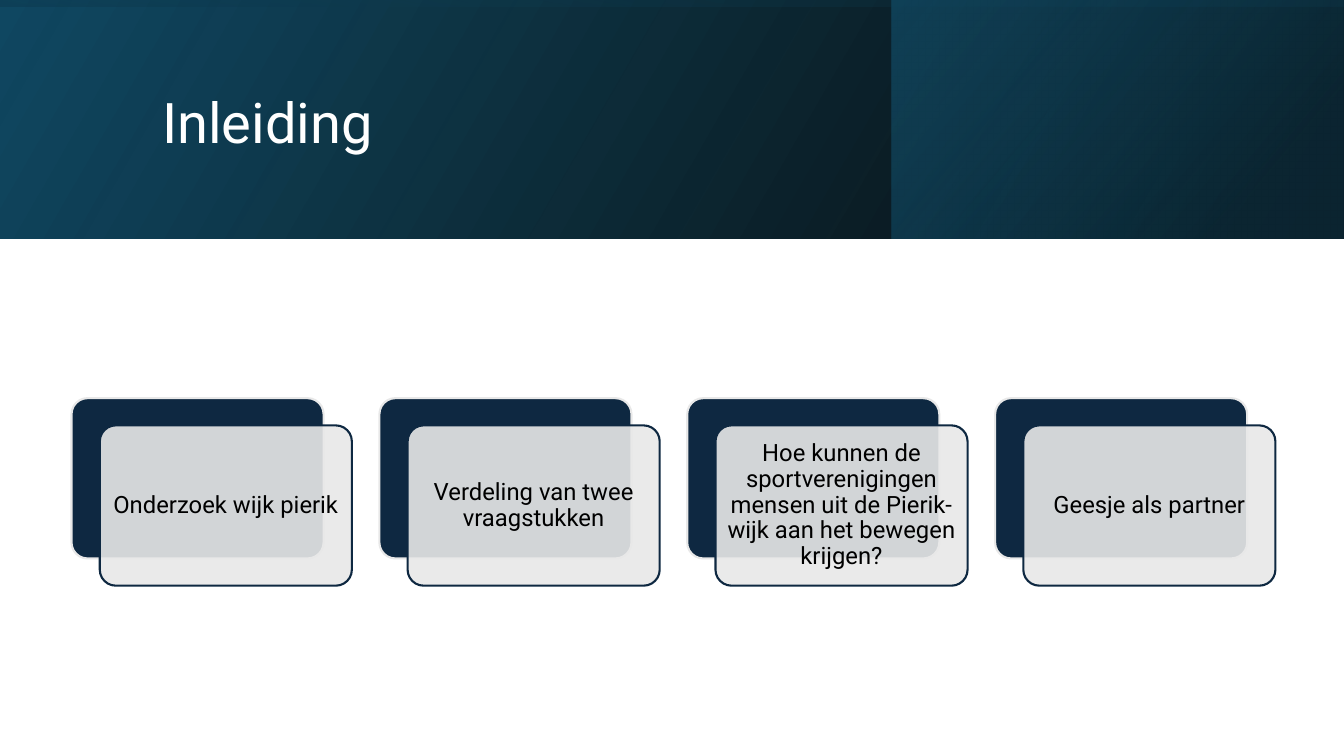
from lxml import etree
from pptx import Presentation
from pptx import util as u
from pptx.dml.color import RGBColor
from pptx.enum import shapes, text
from pptx.oxml import ns

NAVY, GREY = "0E2841", "E8E8E8"


def color(code):
    return RGBColor.from_string(code)


class Deck:
    font = "Roboto"

    def __init__(self, wide, high):
        self.prs = Presentation()
        self.prs.slide_width = u.Inches(wide)
        self.prs.slide_height = u.Inches(high)
        self.slide = self.prs.slides.add_slide(self.prs.slide_layouts[6])

    def shape(self, kind, box):
        item = self.slide.shapes.add_shape(kind, *map(u.Inches, box))
        item.shadow.inherit = False
        return item

    def alpha(self, node, value):
        etree.SubElement(node, ns.qn("a:alpha"), val=str(value * 1000))

    def band(self, box, stops, angle, turn=0):
        """Mirrored rectangle with a gradient; stops are (place, colour, opacity)."""
        item = self.shape(shapes.MSO_SHAPE.RECTANGLE, box)
        item.rotation = turn
        item.line.fill.background()
        props = item._element.spPr
        props.find(ns.qn("a:xfrm")).set("flipH", "1")
        item.fill.gradient()
        grad = props.find(ns.qn("a:gradFill"))
        grad.set("rotWithShape", "1")
        for part in list(grad):
            grad.remove(part)
        group = etree.SubElement(grad, ns.qn("a:gsLst"))
        for place, code, value in stops:
            stop = etree.SubElement(group, ns.qn("a:gs"), pos=str(place * 1000))
            self.alpha(etree.SubElement(stop, ns.qn("a:srgbClr"), val=code), value)
        etree.SubElement(grad, ns.qn("a:lin"), ang=str(angle * 60000), scaled="0")

    def label(self, item, words, size, code, align):
        frame = item.text_frame
        frame.word_wrap = True
        frame.vertical_anchor = text.MSO_ANCHOR.MIDDLE
        para = frame.paragraphs[0]
        para.text = words
        para.alignment = align
        para.line_spacing = 0.9
        para.font.name = self.font
        para.font.size = u.Pt(size)
        para.font.color.rgb = color(code)

    def title(self, box, words):
        item = self.slide.shapes.add_textbox(*map(u.Inches, box))
        self.label(item, words, 40, "FFFFFF", text.PP_ALIGN.LEFT)

    def card(self, box, fill, line):
        item = self.shape(shapes.MSO_SHAPE.ROUNDED_RECTANGLE, box)
        item.adjustments[0] = 0.1
        item.fill.solid()
        item.fill.fore_color.rgb = color(fill)
        item.line.color.rgb = color(line)
        item.line.width = u.Pt(1.5)
        return item

    def topic(self, left, top, words):
        """Dark card with a see-through text card set off in front of it."""
        wide, high = 2.5, 1.59
        self.card((left, top, wide, high), NAVY, GREY)
        front = self.card((left + 0.28, top + 0.27, wide, high), GREY, NAVY)
        fill = front._element.spPr.find(ns.qn("a:solidFill"))
        self.alpha(fill[0], 90)
        frame = front.text_frame
        frame.margin_left = frame.margin_right = u.Inches(0.07)
        frame.margin_top = frame.margin_bottom = u.Inches(0.07)
        self.label(front, words, 17, "000000", text.PP_ALIGN.CENTER)


def main():
    wide, head = 13.33, 2.37
    deck = Deck(wide, 7.5)

    # Header: three layered gradients, the last one turned on its side
    deck.band((0, 0, wide, head), [(0, "000000", 96), (100, "104862", 100)], 330)
    deck.band((8.84, 0, 4.48, head), [(19, "0B3041", 68), (100, "156082", 48)], 320)
    shift = (wide - head) / 2
    deck.band((shift, -shift, head, wide),
              [(23, "104862", 16), (99, "000000", 45)], 350, turn=270)
    deck.title((1.51, 0.38, 10.63, 1.72), "Inleiding")

    # Row of topics
    topics = [
        "Onderzoek wijk pierik",
        "Verdeling van twee vraagstukken",
        "Hoe kunnen de sportverenigingen mensen uit de Pierik-wijk "
        "aan het bewegen krijgen?",
        "Geesje als partner",
    ]
    left, right = 0.71, 9.87
    step = (right - left) / (len(topics) - 1)
    for i, words in enumerate(topics):
        deck.topic(left + i * step, 3.95, words)

    deck.prs.save("out.pptx")


if __name__ == "__main__":
    main()
